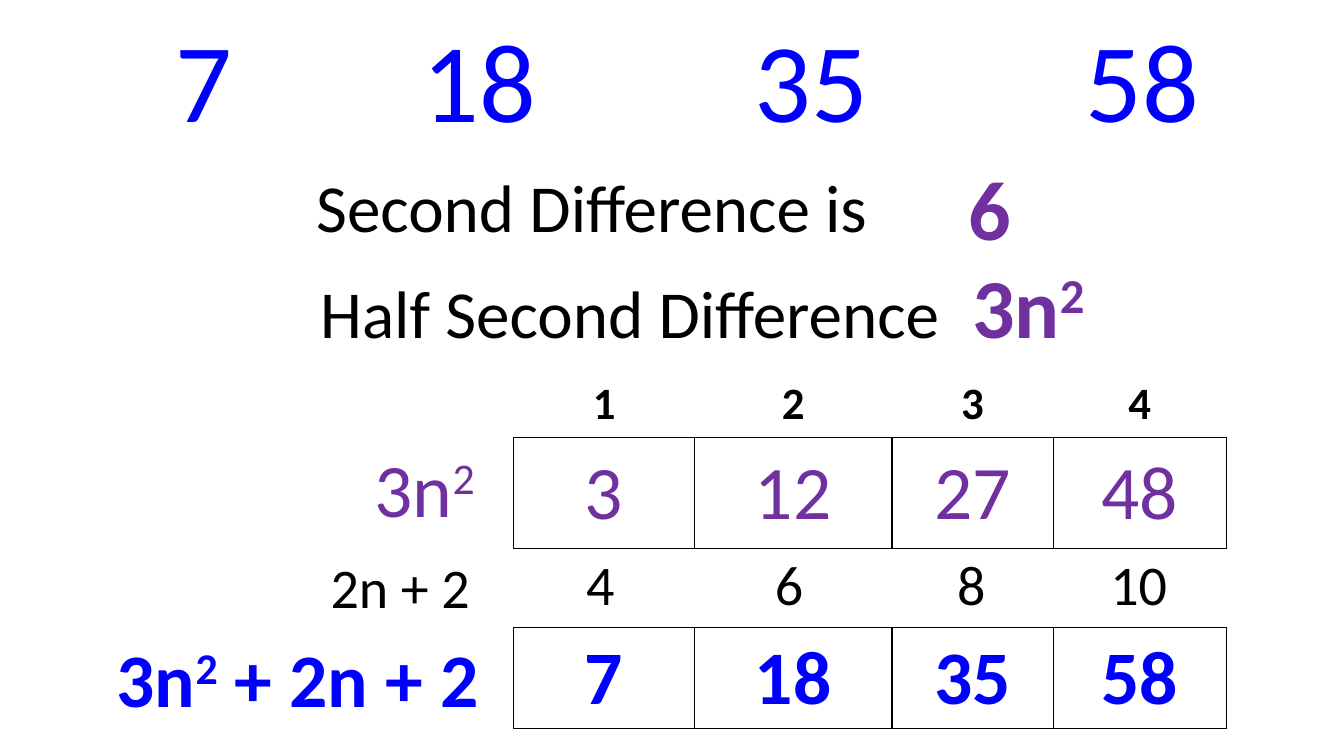
"""Build a slide that finds the nth term of a quadratic sequence."""
from dataclasses import dataclass

from lxml import etree
from pptx import Presentation
from pptx import util as u
from pptx.dml.color import RGBColor
from pptx.enum import text
from pptx.oxml import ns

ALIGN = text.PP_ALIGN
ANCHOR = text.MSO_ANCHOR


@dataclass(frozen=True)
class Theme:
    font: str = "Calibri"
    black: str = "000000"
    blue: str = "0000FF"
    purple: str = "7030A0"
    white: str = "FFFFFF"
    sequence: int = 80
    result: int = 60
    term: int = 54
    label: int = 48
    linear: int = 40
    position: int = 32


class Board:
    def __init__(self, theme, slide):
        self.theme = theme
        self.slide = slide

    def run(self, paragraph, words, size, color, bold=False, raised=False):
        run = paragraph.add_run()
        run.text = words
        font = run.font
        font.name, font.size, font.bold = self.theme.font, u.Pt(size), bold
        font.color.rgb = RGBColor.from_string(color)
        if raised:
            run._r.get_or_add_rPr().set("baseline", "30000")

    def label(self, place, runs, align=ALIGN.LEFT, wrap=True, tab=None):
        frame = self.slide.shapes.add_textbox(*map(u.Cm, place)).text_frame
        frame.word_wrap = wrap
        frame.auto_size = text.MSO_AUTO_SIZE.SHAPE_TO_FIT_TEXT
        paragraph = frame.paragraphs[0]
        paragraph.alignment = align
        if tab:
            stops = etree.SubElement(paragraph._p.get_or_add_pPr(), ns.qn("a:tabLst"))
            etree.SubElement(stops, ns.qn("a:tab"), pos=str(u.Cm(tab)), algn="l")
        for words, *style in runs:
            self.run(paragraph, words, *style)

    def borders(self, cell, sides, color):
        properties = cell._tc.get_or_add_tcPr()
        for side in "LRTB":
            line = etree.SubElement(properties, ns.qn(f"a:ln{side}"), w=str(u.Pt(1)))
            if side in sides:
                fill = etree.SubElement(line, ns.qn("a:solidFill"))
                etree.SubElement(fill, ns.qn("a:srgbClr"), val=color)
            else:
                etree.SubElement(line, ns.qn("a:noFill"))
        cell.fill.background()

    def table(self, left, top, widths, heights, rows, style, sides,
              line=None, anchor=ANCHOR.TOP, margins=None):
        grid = self.slide.shapes.add_table(
            len(heights), len(widths), u.Cm(left), u.Cm(top),
            u.Cm(sum(widths)), u.Cm(sum(heights))).table
        grid.first_row = grid.horz_banding = False
        for column, width in zip(grid.columns, widths):
            column.width = u.Cm(width)
        for row, height, values, edges in zip(grid.rows, heights, rows, sides):
            row.height = u.Cm(height)
            for cell, value in zip(row.cells, values):
                self.borders(cell, edges, line or self.theme.black)
                cell.vertical_anchor = anchor
                if margins:
                    (cell.margin_left, cell.margin_top,
                     cell.margin_right, cell.margin_bottom) = map(u.Cm, margins)
                if value:
                    paragraph = cell.text_frame.paragraphs[0]
                    paragraph.alignment = ALIGN.CENTER
                    self.run(paragraph, value, *style)


def main():
    deck = Presentation()
    deck.slide_width, deck.slide_height = u.Cm(33.87), u.Cm(19.05)
    t = Theme()
    board = Board(t, deck.slides.add_slide(deck.slide_layouts[6]))

    sequence = ["7", "18", "35", "58"]
    spaced = [part for term in sequence for part in (term, "")][:-1]
    columns = [4.55, 4.98, 4.06, 4.37]
    grid_left = 12.95

    board.table(2.34, 0.36, [5.59, 2.36, 3.6, 3.76, 5.59, 3.76, 3.58], [3.4],
                [spaced], (t.sequence, t.blue), ["LRTB"], t.white,
                ANCHOR.BOTTOM, (0.03, 0.03, 0.03, 0))
    board.table(grid_left, 9.37, columns, [1.65, 2.8],
                [["1", "2", "3", "4"], [""] * 4],
                (t.position, t.black, True), ["B", "LRTB"])
    board.label((7.82, 6.3, 20.6, 2.82),
                [("Half Second Difference\t", t.label, t.black),
                 ("3n", t.result, t.purple, True),
                 ("2", t.result, t.purple, True, True)], tab=16.43)
    board.table(grid_left, 15.82, columns, [2.54], [sequence],
                (t.term, t.blue, True), ["LRTB"])
    board.label((7.72, 4.04, 14.6, 2.31),
                [("Second Difference is", t.label, t.black)])
    board.label((9.04, 11, 3.18, 2.57),
                [("3n", t.term, t.purple), ("2", t.term, t.purple, False, True)],
                ALIGN.RIGHT, wrap=False)
    board.label((23.93, 3.81, 2.01, 2.82),
                [("6", t.result, t.purple, True)], ALIGN.CENTER)
    board.table(grid_left, 11.02, columns, [2.82], [["3", "12", "27", "48"]],
                (t.term, t.purple), [""], anchor=ANCHOR.MIDDLE)
    board.label((8.03, 13.79, 4.06, 1.96),
                [("2n + 2", t.linear, t.black)], ALIGN.RIGHT, wrap=False)
    board.label((2.69, 15.8, 10.24, 2.57),
                [("3n", t.term, t.blue, True), ("2", t.term, t.blue, True, True),
                 (" + 2n + 2", t.term, t.blue, True)])
    board.table(12.93, 13.79, [4.39, 5.13, 4.06, 4.37], [1.96],
                [["4", "6", "8", "10"]], (t.linear, t.black), [""])

    deck.save("out.pptx")


if __name__ == "__main__":
    main()
